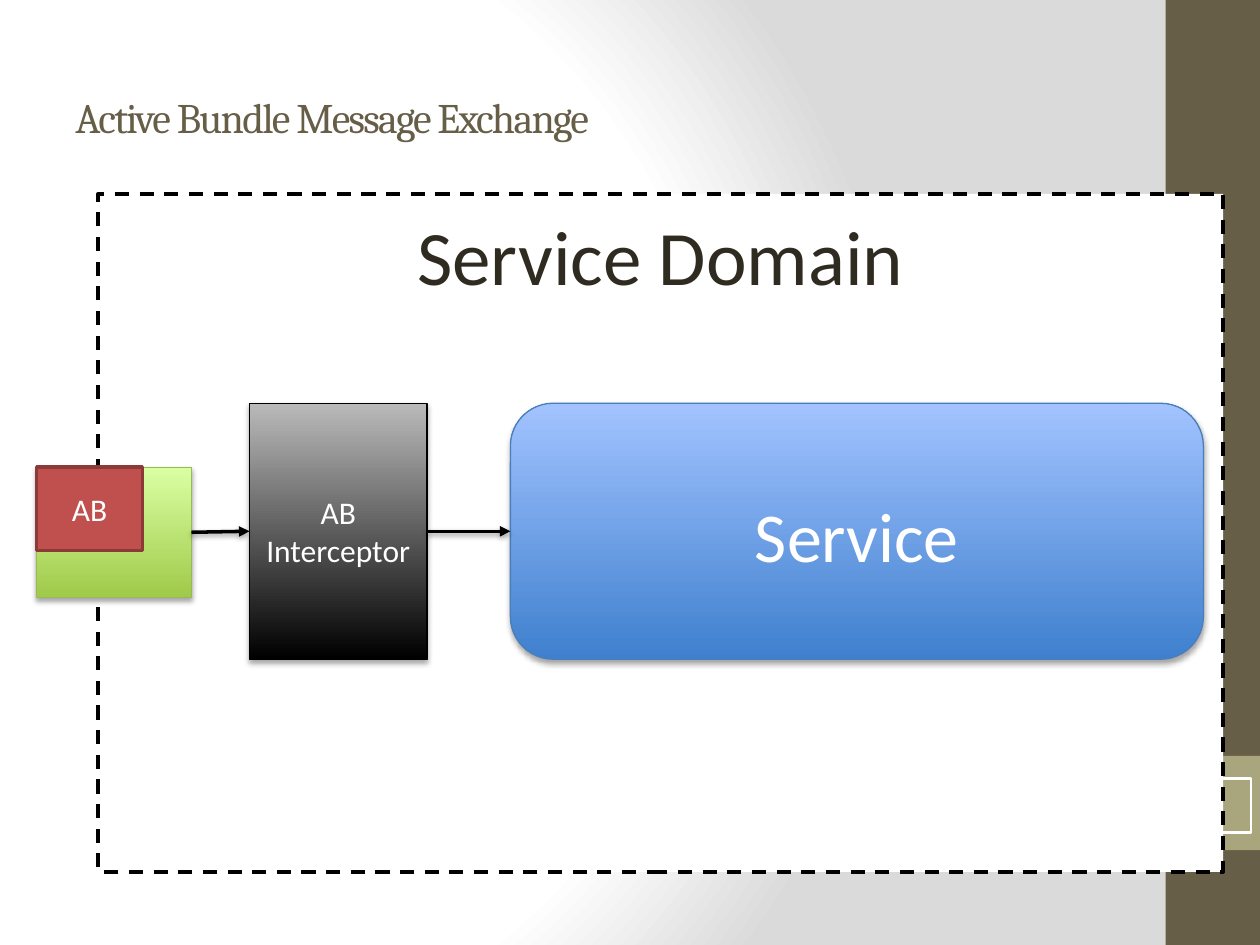
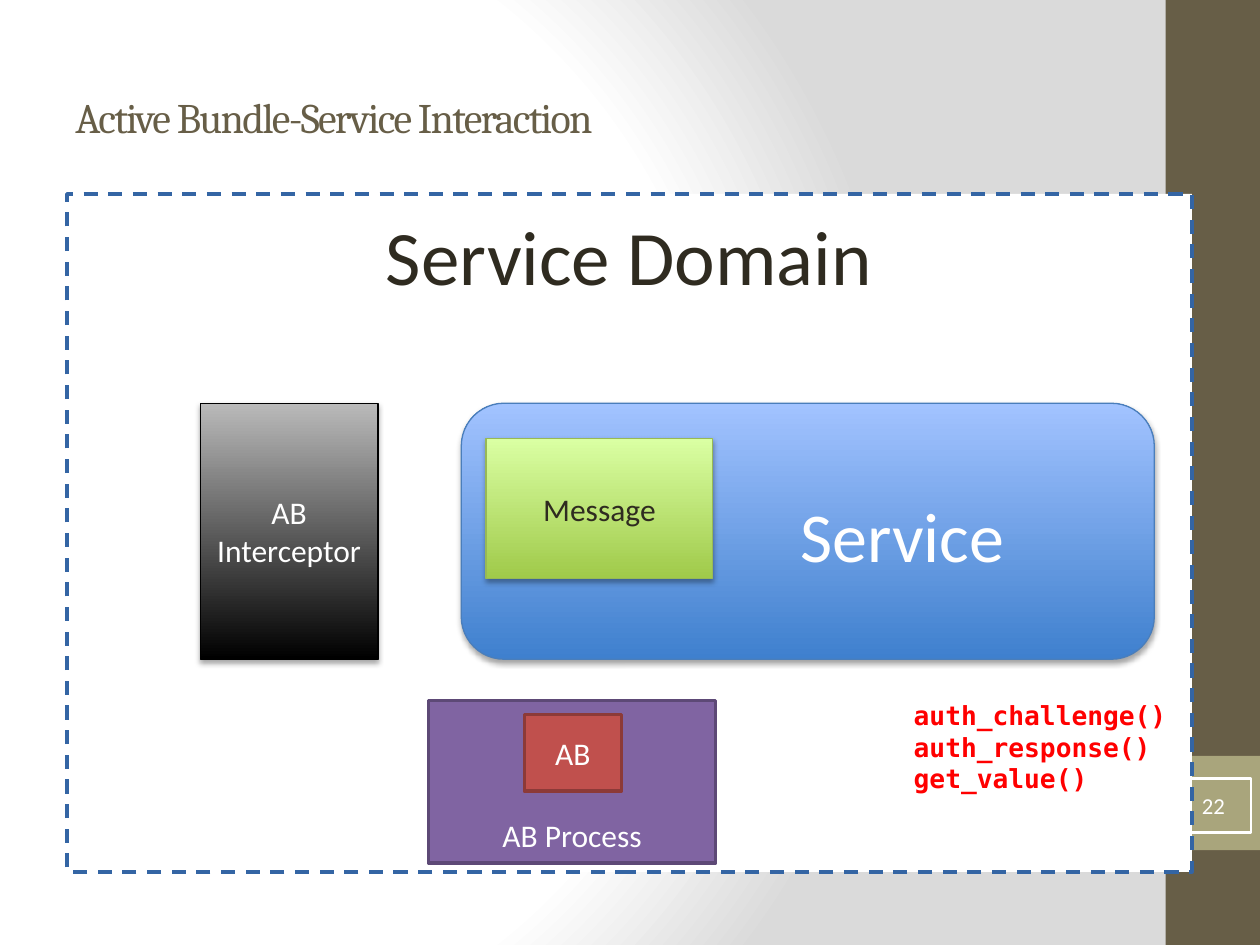
import pptx
import pptx.util
import pptx.dml.color
import pptx.enum.dml
import pptx.enum.shapes
import pptx.enum.text
import pptx.oxml
import pptx.oxml.ns

Cm = pptx.util.Cm
Pt = pptx.util.Pt
RGBColor = pptx.dml.color.RGBColor
SHAPE = pptx.enum.shapes.MSO_SHAPE
ANCHOR = pptx.enum.text.MSO_ANCHOR
ALIGN = pptx.enum.text.PP_ALIGN

WHITE = RGBColor(0xFF, 0xFF, 0xFF)
BLACK = RGBColor(0x00, 0x00, 0x00)
PALE_GREY = RGBColor(0xDA, 0xDA, 0xDA)
SILVER = RGBColor(0xBA, 0xBA, 0xBA)
BROWN = RGBColor(0x67, 0x5E, 0x47)
KHAKI = RGBColor(0xA9, 0xA5, 0x7C)
INK = RGBColor(0x2F, 0x2B, 0x20)
BLUE = RGBColor(0x3F, 0x80, 0xCE)
LIGHT_BLUE = RGBColor(0xA2, 0xC3, 0xFF)
BLUE_EDGE = RGBColor(0x4A, 0x7E, 0xBB)
DASH_BLUE = RGBColor(0x34, 0x65, 0xA4)
GREEN = RGBColor(0xA0, 0xCA, 0x4A)
LIGHT_GREEN = RGBColor(0xDA, 0xFF, 0xA3)
GREEN_EDGE = RGBColor(0x98, 0xB9, 0x55)
CRIMSON = RGBColor(0xC0, 0x50, 0x4D)
CRIMSON_EDGE = RGBColor(0x8C, 0x3A, 0x38)
PURPLE = RGBColor(0x80, 0x64, 0xA2)
PURPLE_EDGE = RGBColor(0x5D, 0x49, 0x76)
RED = RGBColor(0xFF, 0x00, 0x00)

SERVICE_TOP = 8.13
SERVICE_HEIGHT = 5.16


def apply(target, values):
    """Set each named attribute of the target."""
    for name, value in values.items():
        setattr(target, name, value)


def xml(tag, attributes="", content=""):
    """Return a DrawingML element."""
    return pptx.oxml.parse_xml(
        f'<a:{tag} {pptx.oxml.ns.nsdecls("a")} {attributes}>{content}</a:{tag}>')


class Deck:
    """Hold the shared style and draw on the current slide."""

    def __init__(self):
        """Start an empty 4:3 presentation."""
        self.presentation = pptx.Presentation()
        apply(self.presentation, {"slide_width": Cm(25.4), "slide_height": Cm(19.05)})
        self.slide = None

    def start(self, title, number=None):
        """Add a slide with background, side band, title and number box."""
        self.slide = self.presentation.slides.add_slide(self.presentation.slide_layouts[6])
        self.background()
        self.box((23.5, 0, 1.9, 19.05), BROWN)
        self.box((23.5, 15.24, 1.9, 1.9), KHAKI)
        heading = self.text((1.27, 0.76, 21.16, 3.18), [title],
                            {"name": "Cambria", "size": Pt(24), "color": BROWN},
                            {"vertical_anchor": ANCHOR.MIDDLE,
                             "margin_left": Cm(0.25), "margin_right": Cm(0.25)})
        heading.element.xpath(".//a:rPr")[0].set("spc", "-100")
        self.box((23.7, 15.7, 1.52, 1.09), None, WHITE, 1.5, number, 13)

    def background(self):
        """Fill the slide with a radial gradient."""
        fill = self.slide.background.fill
        fill.gradient()
        self.stops(fill, ((0.75, WHITE), (1, PALE_GREY)))
        gradient = self.slide.element.xpath(".//p:bgPr/a:gradFill")[0]
        gradient.replace(gradient.xpath("a:lin")[0], xml(
            "path", 'path="circle"', '<a:fillToRect l="20000" t="50000" r="100000" b="50000"/>'))

    def stops(self, fill, stops):
        """Set position and colour of both gradient stops."""
        for stop, (position, color) in zip(fill.gradient_stops, stops):
            stop.position = position
            stop.color.rgb = color

    def shadow(self, shape, alpha, distance):
        """Give a shape or connector a soft shadow below it."""
        effects = shape.element.spPr.xpath("a:effectLst")
        if not effects:
            effects = [xml("effectLst")]
            shape.element.spPr.append(effects[0])
        effects[0].append(xml(
            "outerShdw",
            f'blurRad="{Pt(3)}" dist="{Pt(distance)}" dir="5400000" rotWithShape="0"',
            f'<a:srgbClr val="{BLACK}"><a:alpha val="{alpha * 1000}"/></a:srgbClr>'))

    def set_lines(self, frame, lines, font, layout, align):
        """Put lines of text into a frame."""
        apply(frame, {"margin_left": 0, "margin_right": 0, "margin_top": 0,
                      "margin_bottom": 0, "word_wrap": True, **layout})
        for index, line in enumerate(lines):
            paragraph = frame.add_paragraph() if index else frame.paragraphs[0]
            paragraph.alignment = align
            run = paragraph.add_run()
            run.text = line
            apply(run.font, {name: value for name, value in font.items() if name != "color"})
            run.font.color.rgb = font["color"]

    def text(self, place, lines, font, layout):
        """Add left-aligned text without a frame."""
        label = self.slide.shapes.add_textbox(*map(Cm, place))
        self.set_lines(label.text_frame, lines, font, layout, ALIGN.LEFT)
        return label

    def box(self, place, fill, edge=None, width=0.75, label=None, size=18,
            color=WHITE, kind=SHAPE.RECTANGLE, **layout):
        """Add a box; a pair of colours gives a shadowed bottom-to-top gradient."""
        shape = self.slide.shapes.add_shape(kind, *map(Cm, place))
        shape.shadow.inherit = False
        if fill is None:
            shape.fill.background()
        elif isinstance(fill, RGBColor):
            shape.fill.solid()
            shape.fill.fore_color.rgb = fill
        else:
            shape.fill.gradient()
            shape.fill.gradient_angle = 90
            self.stops(shape.fill, zip((0, 1), fill))
            self.shadow(shape, 35, 1.8)
        if edge is None:
            shape.line.fill.background()
        else:
            shape.line.color.rgb = edge
            shape.line.width = Pt(width)
        if label:
            self.set_lines(shape.text_frame, [label],
                           {"name": "Calibri", "size": Pt(size), "color": color},
                           {"vertical_anchor": ANCHOR.MIDDLE, **layout}, ALIGN.CENTER)
        return shape

    def domain(self, left, edge):
        """Add the dashed service domain."""
        domain = self.box((left, 3.91, 22.68, 13.67), WHITE, edge, 2, "Service Domain", 44, INK,
                          vertical_anchor=ANCHOR.TOP, margin_top=Cm(0.3))
        domain.line.dash_style = pptx.enum.dml.MSO_LINE.DASH

    def service(self, left, indent=0):
        """Add the service."""
        service = self.box((left, SERVICE_TOP, 13.97, SERVICE_HEIGHT), (BLUE, LIGHT_BLUE),
                           BLUE_EDGE, 0.75, "Service", 40, kind=SHAPE.ROUNDED_RECTANGLE,
                           margin_left=Cm(indent), margin_top=Cm(0.15))
        service.adjustments[0] = 0.167
        return service

    def interceptor(self, left):
        """Add the bundle interceptor."""
        return self.box((left, SERVICE_TOP, 3.58, SERVICE_HEIGHT), (BLACK, SILVER),
                        BLACK, 0.75, "AB Interceptor")

    def message(self, place, label=None):
        """Add a message."""
        return self.box(place, (GREEN, LIGHT_GREEN), GREEN_EDGE, 0.75, label, 18, INK)

    def bundle(self, place):
        """Add an active bundle."""
        self.box(place, CRIMSON, CRIMSON_EDGE, 2, "AB")

    def arrow(self, source, target):
        """Join the right side of the source to the left side of the target."""
        arrow = self.slide.shapes.add_connector(
            pptx.enum.shapes.MSO_CONNECTOR.STRAIGHT, 0, 0, 0, 0)
        arrow.begin_connect(source, 3)
        arrow.end_connect(target, 1)
        arrow.line.color.rgb = BLACK
        arrow.line.width = Pt(2)
        arrow.element.spPr.xpath("a:ln")[0].append(xml("tailEnd", 'type="triangle"'))
        self.shadow(arrow, 38, 1.6)


def message_exchange(deck):
    """Draw a message passing through the interceptor."""
    deck.start("Active Bundle Message Exchange")
    deck.domain(1.98, BLACK)
    service = deck.service(10.29)
    interceptor = deck.interceptor(5.03)
    message = deck.message((0.74, 9.42, 3.12, 2.62))
    deck.arrow(message, interceptor)
    deck.arrow(interceptor, service)
    deck.bundle((0.74, 9.42, 2.13, 1.68))


def service_interaction(deck):
    """Draw the bundle process beside the service."""
    deck.start("Active Bundle-Service Interaction", "22")
    deck.domain(1.35, DASH_BLUE)
    deck.service(9.3, indent=3.81)
    deck.interceptor(4.04)
    deck.box((8.64, 14.12, 5.79, 3.28), PURPLE, PURPLE_EDGE, 2, "AB Process",
             vertical_anchor=ANCHOR.BOTTOM, margin_bottom=Cm(0.18))
    deck.bundle((10.57, 14.4, 1.96, 1.55))
    deck.message((9.8, 8.84, 4.57, 2.82), "Message")
    deck.text((18.42, 14.1, 5.99, 2.16),
              ["auth_challenge()", "auth_response()", "get_value()"],
              {"name": "DejaVu Sans Mono", "size": Pt(15), "bold": True, "color": RED},
              {"vertical_anchor": ANCHOR.TOP})


def main():
    """Build and save both slides."""
    deck = Deck()
    message_exchange(deck)
    service_interaction(deck)
    deck.presentation.save("out.pptx")


if __name__ == "__main__":
    main()
